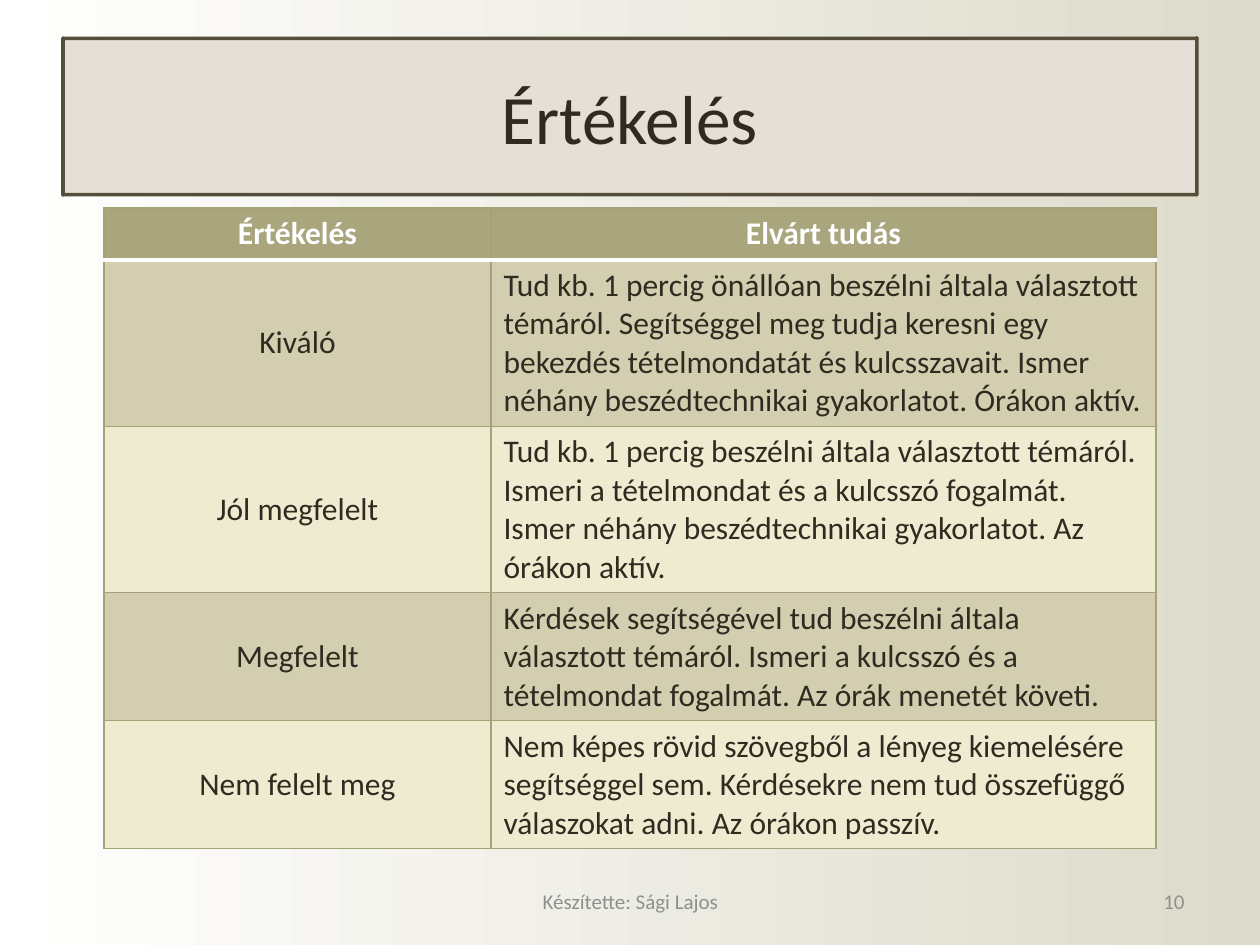
from lxml import etree
from pptx import Presentation
from pptx import util as u
from pptx.dml.color import RGBColor
from pptx.enum import shapes, text
from pptx.oxml.ns import qn

SCALE = u.Inches(1) / 126
DARK, GREY, WHITE = "2F2B20", "8F8F8D", "FFFFFF"
HEADER_FILL, ROW_FILLS, GRID = "A9A57C", ("D2CEAF", "EFEBD1"), "A6A278"
LEFT, CENTER, RIGHT = (text.PP_ALIGN.LEFT, text.PP_ALIGN.CENTER,
                       text.PP_ALIGN.RIGHT)
MIDDLE, TOP = text.MSO_ANCHOR.MIDDLE, text.MSO_ANCHOR.TOP

COLUMN_WIDTHS = (387, 665)
ROW_HEIGHTS = (52, 166, 166, 128, 128)
ROWS = (
    ("Értékelés", "Elvárt tudás"),
    ("Kiváló",
     "Tud kb. 1 percig önállóan beszélni általa választott témáról. "
     "Segítséggel meg tudja keresni egy bekezdés tételmondatát és "
     "kulcsszavait. Ismer néhány beszédtechnikai gyakorlatot. "
     "Órákon aktív."),
    ("Jól megfelelt",
     "Tud kb. 1 percig beszélni általa választott témáról. "
     "Ismeri a tételmondat és a kulcsszó fogalmát. "
     "Ismer néhány beszédtechnikai gyakorlatot. Az órákon aktív."),
    ("Megfelelt",
     "Kérdések segítségével tud beszélni általa választott témáról. "
     "Ismeri a kulcsszó és a tételmondat fogalmát. "
     "Az órák menetét követi."),
    ("Nem felelt meg",
     "Nem képes rövid szövegből a lényeg kiemelésére segítséggel sem. "
     "Kérdésekre nem tud összefüggő válaszokat adni. "
     "Az órákon passzív."),
)


def px(length):
    return u.Emu(round(length * SCALE))


def color(value):
    return RGBColor.from_string(value)


def write(frame, words, ink, align, **font):
    para = frame.paragraphs[0]
    para.alignment = align
    span = para.add_run()
    span.text = words
    span.font.color.rgb = color(ink)
    for name, value in {"name": "Calibri", **font}.items():
        setattr(span.font, name, value)


def paint_background(page):
    fill = page.background.fill
    fill.gradient()
    fill.gradient_angle = 0
    for stop, value in zip(fill.gradient_stops, (WHITE, "DDDBCB")):
        stop.color.rgb = color(value)


def add_title(page, words, *place):
    box = page.shapes.add_shape(shapes.MSO_SHAPE.HORIZONTAL_SCROLL,
                                *map(px, place))
    box.adjustments[0] = 0.002
    box.shadow.inherit = False
    box.fill.solid()
    box.fill.fore_color.rgb = color("E4E0D7")
    box.line.color.rgb = color("554E3A")
    box.line.width = u.Pt(2)
    box.text_frame.vertical_anchor = MIDDLE
    write(box.text_frame, words, DARK, CENTER, size=u.Pt(39.6))


def add_footer(page, words, align, *place):
    frame = page.shapes.add_textbox(*map(px, place)).text_frame
    frame.word_wrap = True
    frame.vertical_anchor = MIDDLE
    write(frame, words, GREY, align, size=u.Pt(12))


def set_borders(cell, borders):
    """Borders are (line colour, points) for left, right, top, bottom."""
    props = cell._tc.get_or_add_tcPr()
    for index, (side, (ink, width)) in enumerate(zip("LRTB", borders)):
        line = etree.Element(qn("a:ln" + side), w=str(u.Pt(width)))
        solid = etree.SubElement(line, qn("a:solidFill"))
        etree.SubElement(solid, qn("a:srgbClr"), val=ink)
        props.insert(index, line)


def style_cell(cell, words, row, column):
    header = row == 0
    label = column == 0
    cell.fill.solid()
    cell.fill.fore_color.rgb = color(
        HEADER_FILL if header else ROW_FILLS[(row - 1) % 2])
    cell.vertical_anchor = MIDDLE if label and not header else TOP
    write(cell.text_frame, words, WHITE if header else DARK,
          CENTER if header or label else LEFT, size=u.Pt(18), bold=header)
    thin, rule = (GRID, 0.75), (WHITE, 2)
    set_borders(cell, (thin, thin, rule if row == 1 else thin,
                       rule if header else thin))


def add_grades(page, left, top):
    size = sum(COLUMN_WIDTHS), sum(ROW_HEIGHTS)
    table = page.shapes.add_table(len(ROWS), len(COLUMN_WIDTHS),
                                  *map(px, (left, top, *size))).table
    for column, width in zip(table.columns, COLUMN_WIDTHS):
        column.width = px(width)
    for row, height in zip(table.rows, ROW_HEIGHTS):
        row.height = px(height)
    for r, row in enumerate(ROWS):
        for c, words in enumerate(row):
            style_cell(table.cell(r, c), words, r, c)


def main():
    deck = Presentation()
    deck.slide_width, deck.slide_height = px(1260), px(945)
    page = deck.slides.add_slide(deck.slide_layouts[6])
    paint_background(page)

    # Title and grading table
    add_title(page, "Értékelés", 63, 38, 1134, 157)
    add_grades(page, 104, 208)

    # Author and page number
    add_footer(page, "Készítette: Sági Lajos", CENTER, 431, 876, 399, 50)
    add_footer(page, "10", RIGHT, 903, 876, 294, 50)

    deck.save("out.pptx")


if __name__ == "__main__":
    main()
